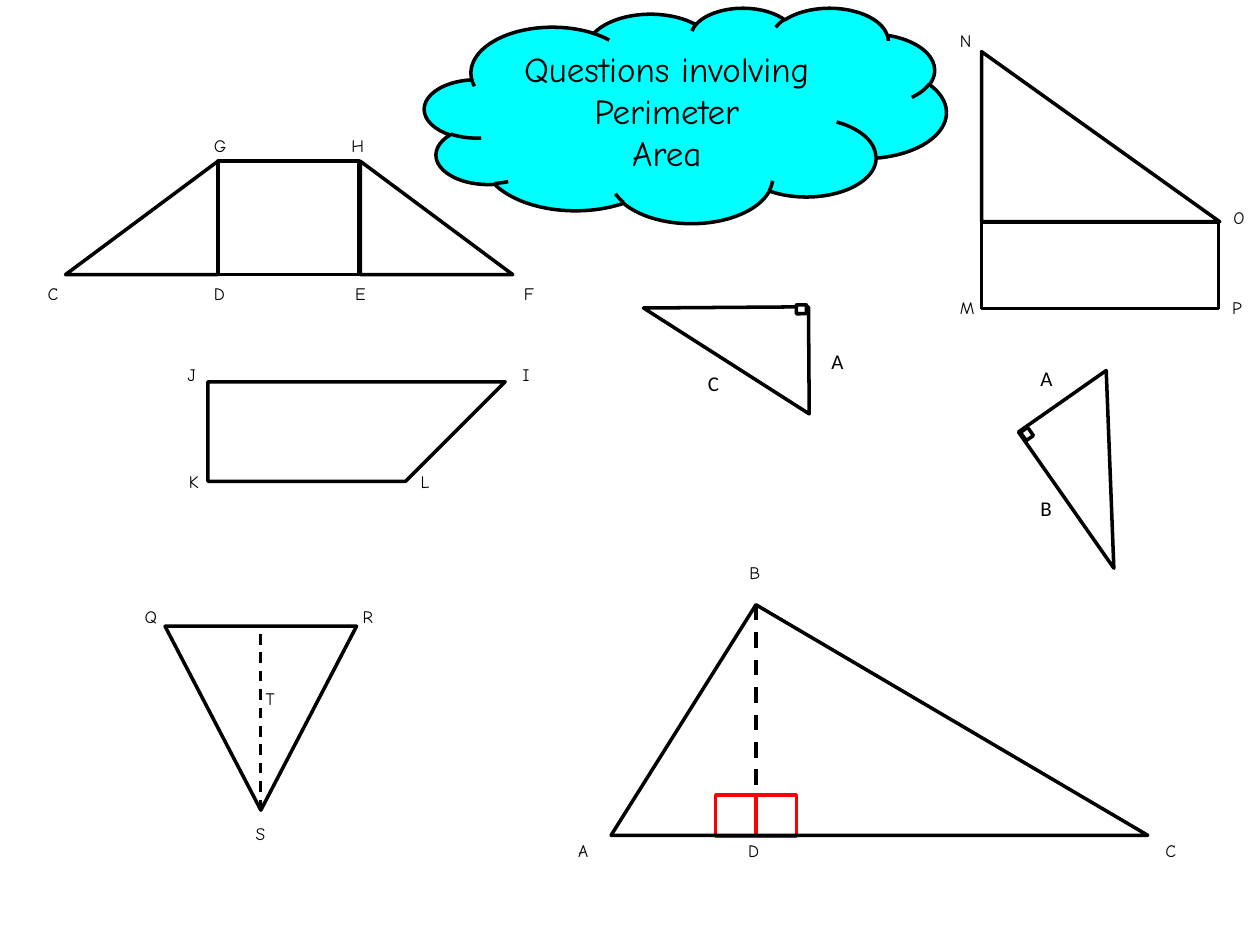
from lxml.etree import SubElement
from pptx import Presentation
from pptx.dml.color import RGBColor
from pptx.enum.dml import MSO_LINE
from pptx.enum.shapes import MSO_CONNECTOR, MSO_SHAPE
from pptx.enum.text import MSO_ANCHOR, MSO_AUTO_SIZE, PP_ALIGN
from pptx.oxml.ns import qn
from pptx.util import Inches, Pt

COLOURS = {"ink": "000000", "paper": "FFFFFF", "cloud": "00FFFF", "mark": "FF0000"}
LETTER_FONT = ("Comic Neue", 10)
SIDE_FONT = ("Calibri", 12)
TITLE_FONT = ("Comic Neue", 20)


def colour(name):
    return RGBColor.from_string(COLOURS[name])


def set_font(paragraph, font):
    paragraph.font.name = font[0]
    paragraph.font.size = Pt(font[1])
    paragraph.font.color.rgb = colour("ink")


def outline(shape, line="ink", fill=None):
    shape.shadow.inherit = False
    shape.line.color.rgb = colour(line)
    shape.line.width = Pt(2)
    if fill:
        shape.fill.solid()
        shape.fill.fore_color.rgb = colour(fill)
    else:
        shape.fill.background()


def add_figure(parent, kind, box, rotation=0, line="ink", fill=None):
    shape = parent.shapes.add_shape(kind, *map(Inches, box))
    shape.rotation = rotation
    outline(shape, line, fill)
    return shape


def add_polygon(parent, points):
    corners = [(Inches(x), Inches(y)) for x, y in points]
    builder = parent.shapes.build_freeform(*corners[0])
    builder.add_line_segments(corners[1:], close=True)
    outline(builder.convert_to_shape())


def add_height(parent, x, top, bottom, width):
    line = parent.shapes.add_connector(
        MSO_CONNECTOR.STRAIGHT, Inches(x), Inches(top), Inches(x), Inches(bottom))
    line.line.color.rgb = colour("ink")
    line.line.width = Pt(width)
    line.line.dash_style = MSO_LINE.DASH
    SubElement(line._element.spPr, qn("a:effectLst"))


def add_labels(parent, labels, font=LETTER_FONT):
    for text, left, top in labels:
        box = parent.shapes.add_textbox(
            Inches(left), Inches(top), Inches(0.3), Inches(0.27))
        frame = box.text_frame
        frame.word_wrap = False
        frame.auto_size = MSO_AUTO_SIZE.SHAPE_TO_FIT_TEXT
        frame.text = text
        set_font(frame.paragraphs[0], font)


def add_right_triangle(page, box, corner, rotation, labels):
    group = page.shapes.add_group_shape()
    add_figure(group, MSO_SHAPE.RIGHT_TRIANGLE, box, rotation)
    add_figure(group, MSO_SHAPE.RECTANGLE, (*corner, 0.08, 0.07), rotation, fill="paper")
    add_labels(group, labels, SIDE_FONT)


def add_trapezium_with_square(page):
    group = page.shapes.add_group_shape()
    top, height = 1.28, 0.9
    add_figure(group, MSO_SHAPE.RIGHT_TRIANGLE, (2.86, top, 1.21, height))
    left_wing = add_figure(group, MSO_SHAPE.RIGHT_TRIANGLE, (0.52, top, 1.21, height))
    left_wing._element.spPr.xfrm.set("flipH", "1")
    add_figure(group, MSO_SHAPE.RECTANGLE, (1.73, top, 1.12, height))
    add_labels(group, [("C", 0.28, 2.2), ("D", 1.6, 2.2), ("E", 2.72, 2.2),
                       ("F", 4.06, 2.2), ("G", 1.6, 1.02), ("H", 2.69, 1.02)])


def add_right_trapezium(page):
    group = page.shapes.add_group_shape()
    add_polygon(group, [(1.65, 3.82), (3.22, 3.82), (4.01, 3.03), (1.65, 3.03)])
    add_labels(group, [("I", 4.05, 2.84), ("J", 1.39, 2.84),
                       ("K", 1.4, 3.69), ("L", 3.24, 3.69)])


def add_triangle_on_rectangle(page):
    group = page.shapes.add_group_shape()
    add_figure(group, MSO_SHAPE.RIGHT_TRIANGLE, (7.79, 0.41, 1.89, 1.35))
    add_figure(group, MSO_SHAPE.RECTANGLE, (7.79, 1.76, 1.88, 0.69))
    add_labels(group, [("M", 7.52, 2.31), ("N", 7.52, 0.19),
                       ("O", 9.69, 1.59), ("P", 9.68, 2.31)])


def add_inverted_triangle(page):
    group = page.shapes.add_group_shape()
    add_figure(group, MSO_SHAPE.ISOSCELES_TRIANGLE, (1.31, 4.97, 1.52, 1.46), 180)
    add_height(group, 2.07, 6.43, 4.97, 1.5)
    add_labels(group, [("Q", 1.05, 4.76), ("R", 2.78, 4.76),
                       ("S", 1.93, 6.48), ("T", 2.01, 5.41)])


def add_large_triangle(page):
    group = page.shapes.add_group_shape()
    add_height(group, 6, 4.8, 6.63, 2.25)
    for left in (6, 5.68):
        add_figure(group, MSO_SHAPE.RECTANGLE, (left, 6.31, 0.32, 0.33), line="mark")
    triangle = add_figure(group, MSO_SHAPE.ISOSCELES_TRIANGLE, (4.85, 4.8, 4.26, 1.83))
    triangle.adjustments[0] = 0.27
    add_labels(group, [("A", 4.49, 6.62), ("B", 5.85, 4.41),
                       ("C", 9.15, 6.62), ("D", 5.84, 6.62)])


def add_title_cloud(page):
    cloud = add_figure(page, MSO_SHAPE.CLOUD, (3.37, 0.06, 4.14, 1.71), fill="cloud")
    frame = cloud.text_frame
    frame.word_wrap = True
    frame.vertical_anchor = MSO_ANCHOR.MIDDLE
    frame.text = "Questions involving Perimeter\nArea"
    for paragraph in frame.paragraphs:
        paragraph.alignment = PP_ALIGN.CENTER
        set_font(paragraph, TITLE_FONT)


def main():
    deck = Presentation()
    deck.slide_width, deck.slide_height = Inches(10), Inches(7.5)
    page = deck.slides.add_slide(deck.slide_layouts[6])

    # Right-angled triangle at the right
    add_right_triangle(page, (8.15, 3.3, 1.32, 0.85), (8.11, 3.41), 55,
                       [("A", 8.16, 2.85), ("B", 8.16, 3.88)])
    # Compound shapes
    add_trapezium_with_square(page)
    add_right_trapezium(page)
    add_triangle_on_rectangle(page)
    add_inverted_triangle(page)
    # Right-angled triangle in the middle
    add_right_triangle(page, (5.11, 2.44, 1.31, 0.85), (6.32, 2.42), 179.6,
                       [("A", 6.5, 2.72), ("C", 5.52, 2.89)])
    # Triangle with its height marked
    add_large_triangle(page)
    # Title
    add_title_cloud(page)

    deck.save("out.pptx")


if __name__ == "__main__":
    main()
